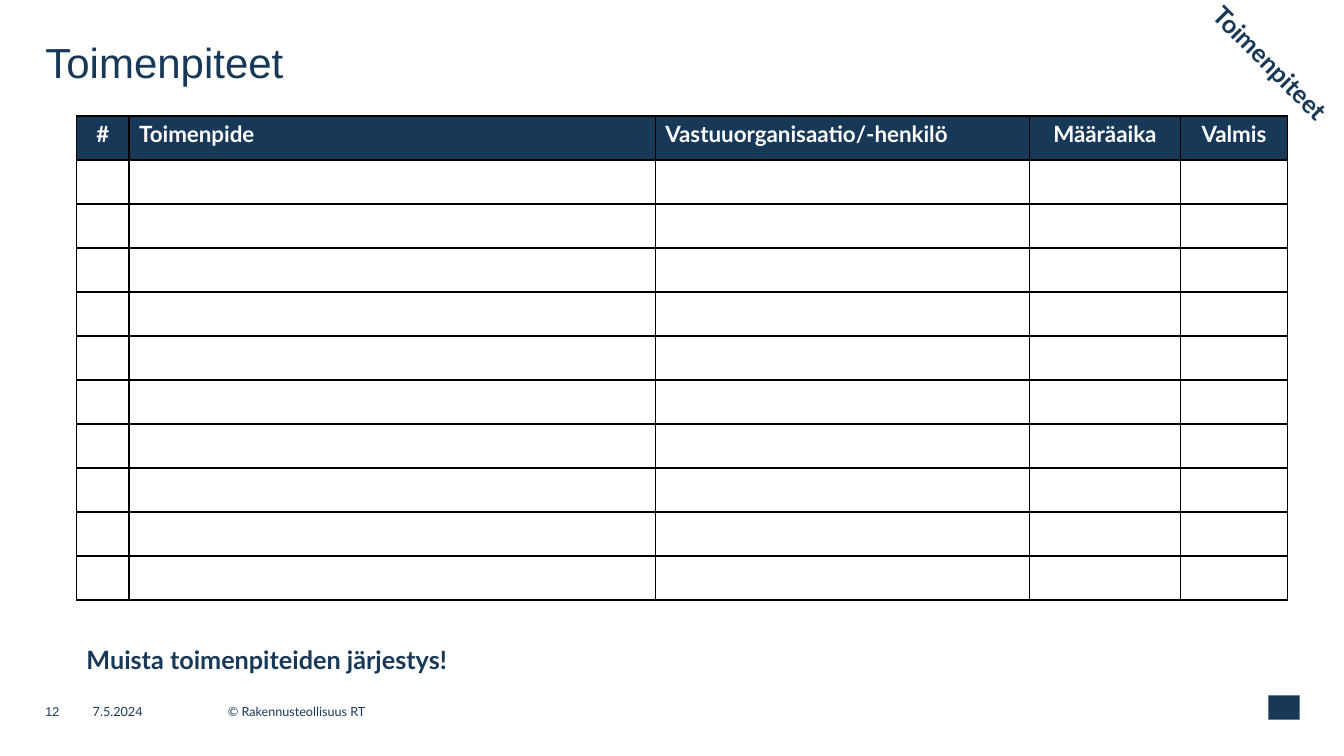
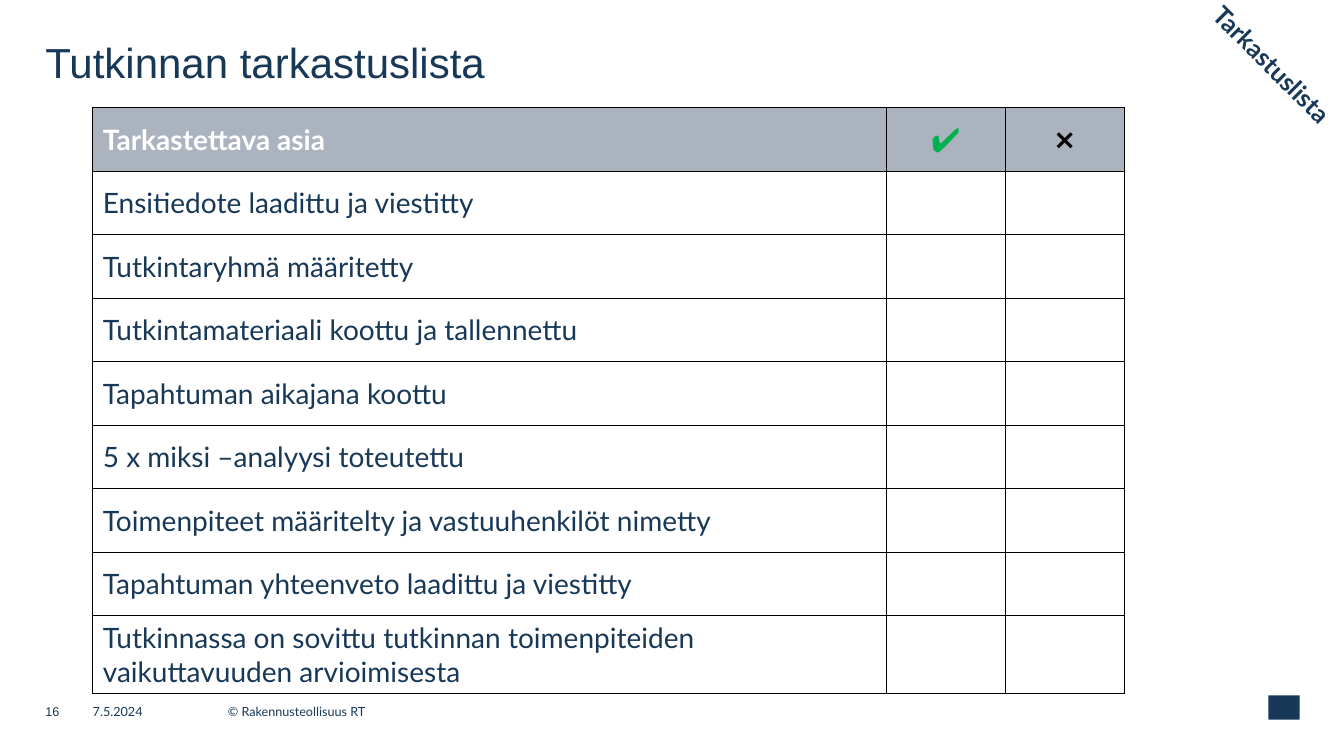
"""Builds an action table slide and an investigation checklist slide."""
from lxml import etree
from pptx import Presentation, util as u
from pptx.dml.color import RGBColor
from pptx.enum import shapes, text
from pptx.oxml import ns

NAVY = RGBColor(0x18, 0x38, 0x58)
GREY = RGBColor(0xAB, 0xB4, 0xBE)
GREEN = RGBColor(0x00, 0xB0, 0x50)
WHITE = RGBColor(0xFF, 0xFF, 0xFF)
BLACK = RGBColor(0x00, 0x00, 0x00)

LEFT, CENTER = text.PP_ALIGN.LEFT, text.PP_ALIGN.CENTER
TOP, MIDDLE = text.MSO_ANCHOR.TOP, text.MSO_ANCHOR.MIDDLE

DATE = "7.5.2024"
COPYRIGHT = "© Rakennusteollisuus RT"

ACTION_HEAD = [("#", CENTER), ("Toimenpide", LEFT),
               ("Vastuuorganisaatio/-henkilö", LEFT),
               ("Määräaika", CENTER), ("Valmis", CENTER)]
ACTION_ROWS = 10
CHECKS = [
    "Ensitiedote laadittu ja viestitty",
    "Tutkintaryhmä määritetty",
    "Tutkintamateriaali koottu ja tallennettu",
    "Tapahtuman aikajana koottu",
    "5 x miksi –analyysi toteutettu",
    "Toimenpiteet määritelty ja vastuuhenkilöt nimetty",
    "Tapahtuman yhteenveto laadittu ja viestitty",
    "Tutkinnassa on sovittu tutkinnan toimenpiteiden vaikuttavuuden arvioimisesta",
]


def write(tf, words, size, font="Lato", color=NAVY, bold=False, align=LEFT):
    p = tf.paragraphs[0]
    p.alignment = align
    r = p.add_run()
    r.text = words
    r.font.size, r.font.name, r.font.bold = u.Pt(size), font, bold
    r.font.color.rgb = color


def add_text(s, box, words, size, inset=True, anchor=TOP, wrap=True, **style):
    sp = s.shapes.add_textbox(*map(u.Inches, box))
    tf = sp.text_frame
    tf.word_wrap, tf.vertical_anchor = wrap, anchor
    if inset:
        tf.auto_size = text.MSO_AUTO_SIZE.SHAPE_TO_FIT_TEXT
    else:
        tf.margin_left = tf.margin_right = tf.margin_top = tf.margin_bottom = 0
    write(tf, words, size, **style)
    return sp


def add_base(prs, title, corner, number):
    s = prs.slides.add_slide(prs.slide_layouts[6])
    mark = s.shapes.add_shape(shapes.MSO_SHAPE.RECTANGLE,
                              *map(u.Inches, (12.58, 6.9, 0.31, 0.24)))
    mark.shadow.inherit = False
    mark.fill.solid()
    mark.fill.fore_color.rgb = NAVY
    mark.line.fill.background()
    add_text(s, (0.45, 0.36, 11.58, 1.11), title, 30, inset=False, font="Arial")
    footers = [(0.45, 0.47, number, "Arial"), (0.92, 1.34, DATE, "Lato"),
               (2.26, 9.76, COPYRIGHT, "Lato")]
    for x, w, words, font in footers:
        add_text(s, (x, 6.98, w, 0.16), words, 9, inset=False, anchor=MIDDLE, font=font)
    add_text(s, (11.71, 0.56, 2.05, 0.4), corner, 18, bold=True).rotation = 45
    return s


def add_borders(cell):
    tc_pr = cell._tc.get_or_add_tcPr()
    for side in ("lnL", "lnR", "lnT", "lnB"):
        ln = etree.SubElement(tc_pr, ns.qn("a:" + side), w=str(u.Pt(1)))
        fill = etree.SubElement(ln, ns.qn("a:solidFill"))
        etree.SubElement(fill, ns.qn("a:srgbClr"), val=str(BLACK))


def add_grid(s, left, top, widths, height, count, head_fill):
    frame = s.shapes.add_table(count, len(widths), u.Inches(left), u.Inches(top),
                               u.Inches(sum(widths)), u.Inches(height * count))
    table = frame.table
    table.first_row = table.horz_banding = False
    for column, width in zip(table.columns, widths):
        column.width = u.Inches(width)
    for i, row in enumerate(table.rows):
        row.height = u.Inches(height)
        for cell in row.cells:
            add_borders(cell)
            if i == 0:
                cell.fill.solid()
                cell.fill.fore_color.rgb = head_fill
            else:
                cell.fill.background()
    return table


def fill_cell(cell, words, size, anchor=MIDDLE, **style):
    cell.vertical_anchor = anchor
    write(cell.text_frame, words, size, **style)


def build_actions(prs):
    s = add_base(prs, "Toimenpiteet", "Toimenpiteet", "12")
    table = add_grid(s, 0.76, 1.15, (0.52, 5.22, 3.71, 1.5, 1.06), 0.437,
                     ACTION_ROWS + 1, NAVY)
    for col, (words, align) in enumerate(ACTION_HEAD):
        fill_cell(table.cell(0, col), words, 16, anchor=TOP, color=WHITE,
                  bold=True, align=align)
    add_text(s, (0.76, 6.34, 4.17, 0.4), "Muista toimenpiteiden järjestys!", 18,
             wrap=False, bold=True)


def build_checklist(prs):
    s = add_base(prs, "Tutkinnan tarkastuslista", "Tarkastuslista", "16")
    table = add_grid(s, 0.92, 1.07, (7.87, 1.18, 1.18), 0.63, len(CHECKS) + 1, GREY)
    fill_cell(table.cell(0, 0), "Tarkastettava asia", 20, color=WHITE, bold=True)
    fill_cell(table.cell(0, 1), "✔", 24, color=GREEN, bold=True, align=CENTER)
    fill_cell(table.cell(0, 2), "❌", 20, color=BLACK, align=CENTER)
    for row, words in enumerate(CHECKS, 1):
        fill_cell(table.cell(row, 0), words, 20)


def main():
    prs = Presentation()
    prs.slide_width, prs.slide_height = u.Inches(13.33), u.Inches(7.5)
    build_actions(prs)
    build_checklist(prs)
    prs.save("out.pptx")


if __name__ == "__main__":
    main()
